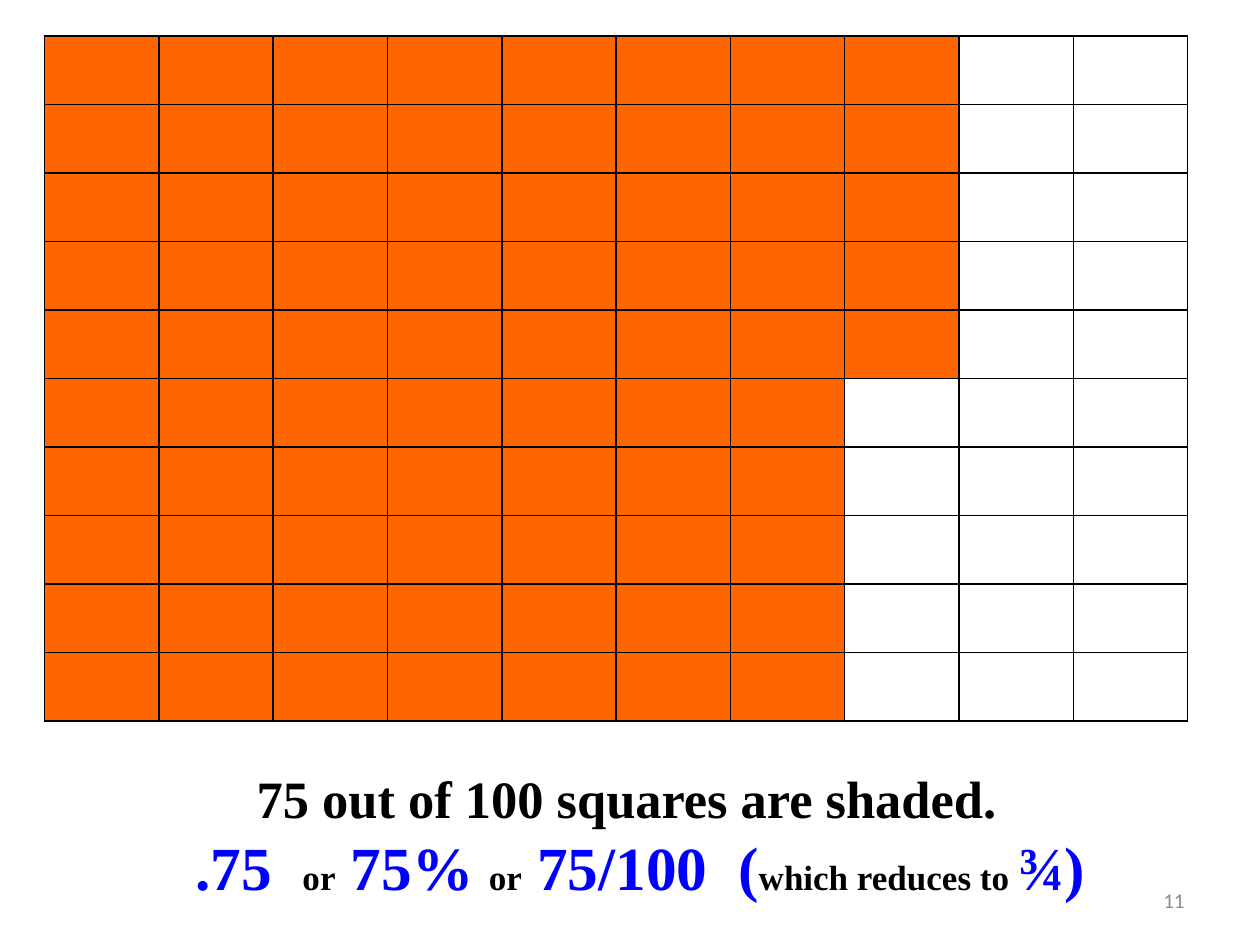
from itertools import product

from lxml.etree import SubElement
from pptx import Presentation
from pptx.dml.color import RGBColor
from pptx.enum.text import MSO_ANCHOR, PP_ALIGN
from pptx.oxml.ns import qn
from pptx.util import Cm, Pt

COLORS = {"shade": "FF6600", "line": "000000", "text": "000000",
          "value": "0000FF", "number": "8C8C8C"}
SIDE = 10      # squares per row and per column
SHADED = 75


def rgb(name):
    return RGBColor.from_string(COLORS[name])


def add_edges(cell):
    props = cell._tc.get_or_add_tcPr()
    for tag in ("a:lnL", "a:lnR", "a:lnT", "a:lnB"):
        line = SubElement(props, qn(tag), w=str(Pt(1)))
        fill = SubElement(line, qn("a:solidFill"))
        SubElement(fill, qn("a:srgbClr"), val=COLORS["line"])


def add_grid(slide, left, top, width, height):
    table = slide.shapes.add_table(SIDE, SIDE, left, top, width, height).table
    table.first_row = table.horz_banding = False
    # Full columns are shaded first, then the top of the next one
    full, rest = divmod(SHADED, SIDE)
    for row, col in product(range(SIDE), repeat=2):
        cell = table.cell(row, col)
        add_edges(cell)
        if col < full + (row < rest):
            cell.fill.solid()
            cell.fill.fore_color.rgb = rgb("shade")
        else:
            cell.fill.background()


def add_box(slide, left, top, width, height, anchor=MSO_ANCHOR.TOP):
    frame = slide.shapes.add_textbox(left, top, width, height).text_frame
    frame.word_wrap = True
    frame.vertical_anchor = anchor
    return frame


def style(para, face, align, bold=False):
    para.alignment = align
    para.font.name = face
    para.font.bold = bold


def add_run(para, text, size, color):
    run = para.add_run()
    run.text = text
    run.font.size = Pt(size)
    run.font.color.rgb = rgb(color)


def add_text(slide):
    frame = add_box(slide, Cm(1.7), Cm(15.32), Cm(22.4), Cm(3.02))
    first, second = frame.paragraphs[0], frame.add_paragraph()
    for para in (first, second):
        style(para, "Times New Roman", PP_ALIGN.CENTER, bold=True)
    add_run(first, "75 out of 100 squares are shaded.  ", 30, "text")
    # Large values alternate with small linking words
    parts = (".75  ", "or", " 75% ", "or", " 75/100  (",
             "which reduces to ", "¾)")
    for i, part in enumerate(parts):
        add_run(second, part, *((20, "text") if i % 2 else (35, "value")))


def add_number(slide):
    frame = add_box(slide, Cm(18.2), Cm(17.65), Cm(5.93), Cm(1.01),
                    MSO_ANCHOR.MIDDLE)
    para = frame.paragraphs[0]
    style(para, "Calibri", PP_ALIGN.RIGHT)
    add_run(para, "11", 12, "number")


def main():
    deck = Presentation()
    deck.slide_width, deck.slide_height = Cm(25.4), Cm(19.05)
    slide = deck.slides.add_slide(deck.slide_layouts[6])
    # Hundred grid
    add_grid(slide, Cm(0.9), Cm(0.73), Cm(23.04), Cm(13.8))
    # Slide number and caption
    add_number(slide)
    add_text(slide)
    deck.save("out.pptx")


if __name__ == "__main__":
    main()
